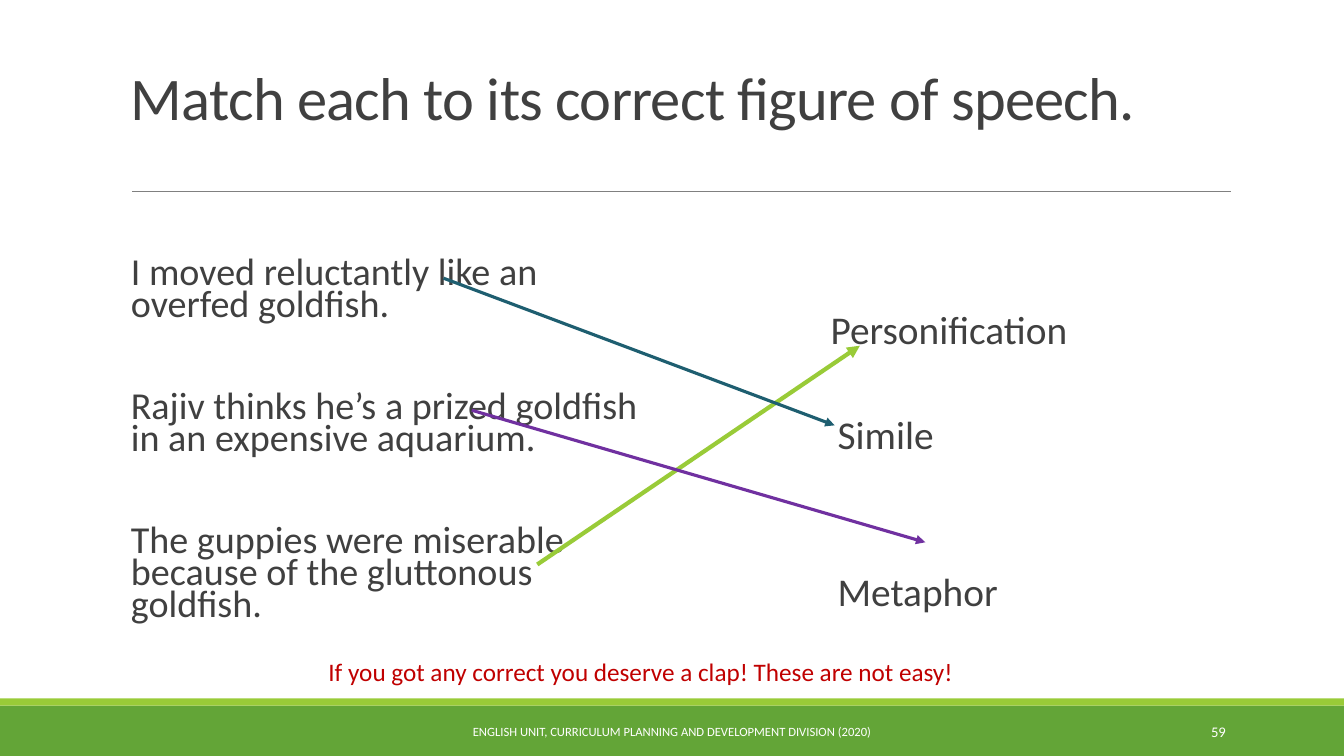
from dataclasses import dataclass

from lxml import etree
from pptx import Presentation
from pptx.dml.color import RGBColor
from pptx.enum.shapes import MSO_CONNECTOR, MSO_SHAPE
from pptx.enum.text import MSO_ANCHOR, PP_ALIGN
from pptx.oxml.ns import qn
from pptx.util import Inches, Pt

RECT, STRAIGHT = MSO_SHAPE.RECTANGLE, MSO_CONNECTOR.STRAIGHT
TOP, MIDDLE, BOTTOM = MSO_ANCHOR.TOP, MSO_ANCHOR.MIDDLE, MSO_ANCHOR.BOTTOM
LEFT, CENTER, RIGHT = PP_ALIGN.LEFT, PP_ALIGN.CENTER, PP_ALIGN.RIGHT
CELL = 0.1  # side of a square grid cell, in inches


@dataclass(frozen=True)
class Theme:
    font: str = "Calibri"
    ink: str = "404040"
    rule: str = "808080"
    green: str = "63A537"
    lime: str = "99CB38"
    teal: str = "1E5E70"
    purple: str = "7030A0"
    red: str = "C00000"
    white: str = "FFFFFF"
    title: float = 43.2
    sentence: float = 27.2
    figure: float = 28.1
    praise: float = 18
    number: float = 10.5
    footer: float = 9


def cells(*counts):
    return [Inches(n * CELL) for n in counts]


def set_all(obj, values):
    for name, value in values.items():
        setattr(obj, name, value)


class SlideBuilder:
    """Places elements by column and row on a grid of CELL squares."""

    def __init__(self, prs, theme):
        self.theme = theme
        self.s = prs.slides.add_slide(prs.slide_layouts[6])

    def band(self, row, rows, color):
        sp = self.s.shapes.add_shape(RECT, *cells(0, row, 133.33, rows))
        sp.shadow.inherit = False
        sp.fill.solid()
        sp.fill.fore_color.rgb = RGBColor.from_string(color)
        sp.line.fill.background()

    def line(self, start, end, color, width, arrow=True):
        cn = self.s.shapes.add_connector(STRAIGHT, *cells(*start, *end))
        cn.line.color.rgb = RGBColor.from_string(color)
        cn.line.width = Pt(width)
        if arrow:
            ln = cn.line._get_or_add_ln()
            etree.SubElement(ln, qn("a:tailEnd"), type="triangle")
        etree.SubElement(cn._element.spPr, qn("a:effectLst"))

    def text(self, at, lines, size, color, anchor=TOP, align=LEFT,
             inset=(1, 0.5), spacing=1.0, gaps=(0,), indents=(0,), tracking=0):
        """Write one paragraph a line; gaps (points after) and indents go by line."""
        tf = self.s.shapes.add_textbox(*cells(*at)).text_frame
        side, top = cells(*inset)
        set_all(tf, {"word_wrap": True, "vertical_anchor": anchor,
                     "margin_left": side, "margin_top": top,
                     "margin_right": Inches(0.1), "margin_bottom": Inches(0.05)})
        for i, line in enumerate(lines):
            p = tf.paragraphs[0] if i == 0 else tf.add_paragraph()
            set_all(p, {"alignment": align, "line_spacing": spacing,
                        "space_after": Pt(gaps[i % len(gaps)])})
            indent = indents[i % len(indents)]
            if indent:
                p._p.get_or_add_pPr().set("marL", str(cells(indent)[0]))
            r = p.add_run()
            r.text = line
            set_all(r.font, {"name": self.theme.font, "size": Pt(size)})
            r.font.color.rgb = RGBColor.from_string(color)
            if tracking:
                r._r.get_or_add_rPr().set("spc", str(round(tracking * 100)))


def main():
    prs = Presentation()
    prs.slide_width, prs.slide_height = cells(133.33, 75)
    t = Theme()
    b = SlideBuilder(prs, t)

    b.band(70, 5, t.green)
    b.band(69.3, 0.7, t.lime)
    b.line((13.1, 19), (122.1, 19), t.rule, 0.5, arrow=False)
    b.text((12, 3.1, 110, 10.6), ["Match each to its correct figure of speech."],
           t.title, t.ink, anchor=BOTTOM, spacing=0.85, tracking=-0.5)

    sentences = ["I moved reluctantly like an overfed goldfish.",
                 "Rajiv thinks he’s a prized goldfish in an expensive aquarium.",
                 "The guppies were miserable because of the gluttonous goldfish."]
    b.text((12, 20.2, 54, 44), sentences, t.sentence, t.ink,
           inset=(1, 5.6), spacing=0.7, gaps=(50, 50, 0))
    b.text((68, 20.2, 54, 44), ["Personification", "Simile", "Metaphor"],
           t.figure, t.ink, inset=(14.4, 11.4), spacing=0.7,
           gaps=(51, 89, 0), indents=(0, 0.7, 0.7))

    b.text((40.3, 70.6, 52.7, 4),
           ["ENGLISH UNIT, CURRICULUM PLANNING AND DEVELOPMENT DIVISION (2020)"],
           t.footer, t.white, anchor=MIDDLE, align=CENTER)
    b.text((108.3, 70.6, 14.3, 4), ["59"], t.number, t.white,
           anchor=MIDDLE, align=RIGHT)

    b.line((53.3, 56), (85.3, 34.3), t.lime, 3)
    b.line((44, 27.6), (82.8, 42.2), t.teal, 2.25)
    b.line((46.8, 40.7), (91.8, 53.8), t.purple, 2.25)
    b.text((31.6, 64.6, 71.9, 4),
           ["If you got any correct you deserve a clap! These are not easy!"],
           t.praise, t.red)

    prs.save("out.pptx")


if __name__ == "__main__":
    main()
